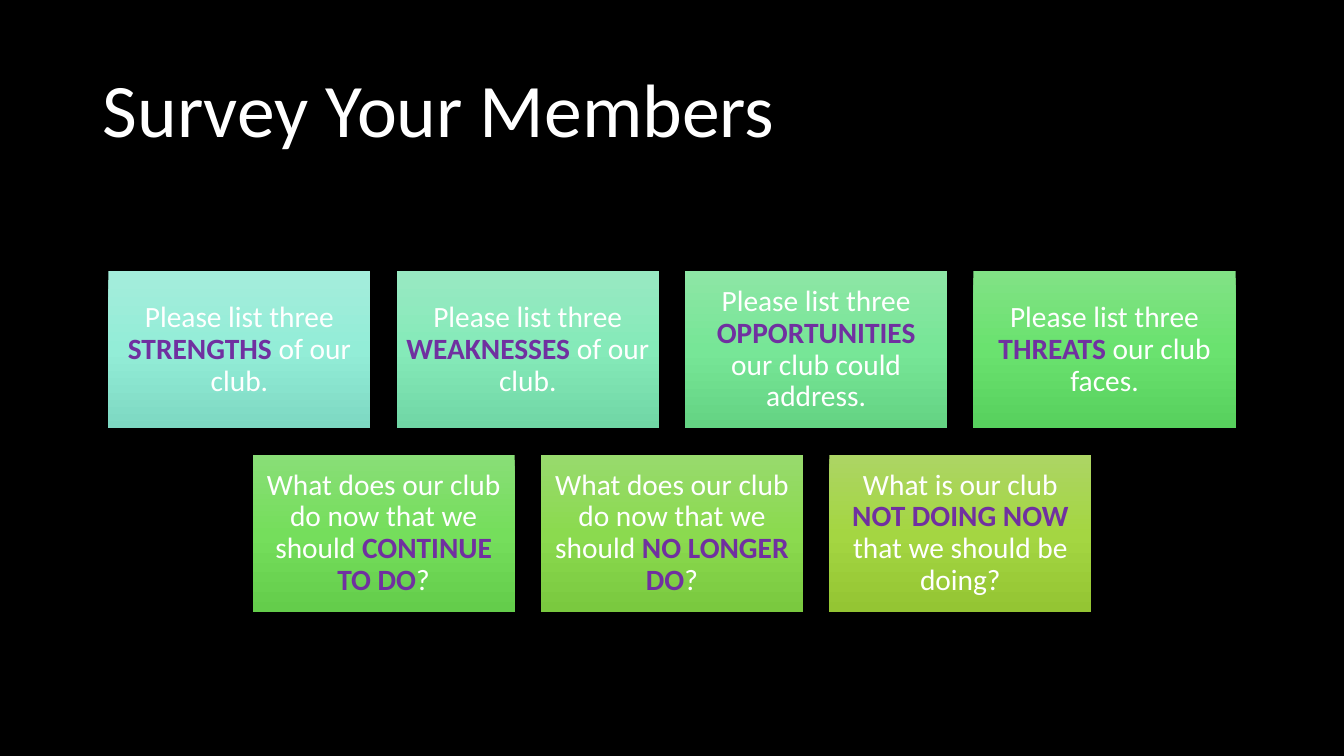
from copy import deepcopy

from pptx import Presentation
from pptx.dml.color import RGBColor
from pptx.enum.shapes import MSO_SHAPE
from pptx.enum.text import MSO_ANCHOR, PP_ALIGN
from pptx.oxml.ns import qn
from pptx.util import Inches, Pt

RECTANGLE = MSO_SHAPE.RECTANGLE
MIDDLE = MSO_ANCHOR.MIDDLE
LEFT, CENTER = PP_ALIGN.LEFT, PP_ALIGN.CENTER

TITLE = "Survey Your Members"
# Each card: text before, emphasis, text after, gradient from top to bottom
CARD_ROWS = [
    [
        ("Please list three ", "STRENGTHS", " of our club.", ("A4EDDB", "93EDD7", "7DD8C2")),
        ("Please list three ", "WEAKNESSES", " of our club.", ("98E9C2", "85EAB9", "70D6A5")),
        ("Please list three ", "OPPORTUNITIES", " our club could address.",
         ("8DE6A5", "77E697", "64D383")),
        ("Please list three ", "THREATS", " our club faces.", ("81E285", "6AE26F", "57D05D")),
    ],
    [
        ("What does our club do now that we should ", "CONTINUE TO DO", "?",
         ("89DE77", "75DE5C", "64CD4B")),
        ("What does our club do now that we should ", "NO LONGER DO", "?",
         ("98DA6D", "8BDA4F", "7AC93F")),
        ("What is our club ", "NOT DOING NOW", " that we should be doing?",
         ("ACD564", "A4D642", "94C533")),
    ],
]
COLORS = {"background": "000000", "text": "FFFFFF", "emphasis": "7030A0"}
FONT = "Calibri"

SLIDE_WIDTH, SLIDE_HEIGHT = 13.33, 7.5
CARD_WIDTH, CARD_HEIGHT = 2.6, 1.56
GAP = CARD_WIDTH / 10
CARDS_TOP = 2.69
CARD_INSET = 0.09


def write_paragraph(frame, spans, size, align):
    """Fill the frame's first paragraph with (text, is_emphasis) spans."""
    frame.word_wrap = True
    frame.vertical_anchor = MIDDLE
    para = frame.paragraphs[0]
    para.alignment = align
    para.line_spacing = 0.9
    for text, is_emphasis in spans:
        span = para.add_run()
        span.text = text
        span.font.name = FONT
        span.font.size = Pt(size)
        span.font.bold = is_emphasis
        color = COLORS["emphasis" if is_emphasis else "text"]
        span.font.color.rgb = RGBColor.from_string(color)


def fill_gradient(shape, colors):
    """Shade the shape downwards through evenly spaced colors."""
    shape.fill.gradient()
    shape.fill.gradient_angle = 270
    stop_list = next(shape._element.spPr.iter(qn("a:gsLst")))
    while len(stop_list) < len(colors):
        stop_list.append(deepcopy(stop_list[0]))
    for index, (stop, color) in enumerate(zip(shape.fill.gradient_stops, colors)):
        stop.position = index / (len(colors) - 1)
        stop.color.rgb = RGBColor.from_string(color)


def add_card(page, left, top, before, emphasis, after, gradient):
    card = page.shapes.add_shape(
        RECTANGLE, Inches(left), Inches(top), Inches(CARD_WIDTH), Inches(CARD_HEIGHT))
    card.shadow.inherit = False
    card.line.fill.background()
    fill_gradient(card, gradient)
    frame = card.text_frame
    frame.margin_left = frame.margin_right = Inches(CARD_INSET)
    frame.margin_top = frame.margin_bottom = Inches(CARD_INSET)
    write_paragraph(frame, [(before, False), (emphasis, True), (after, False)], 21, CENTER)


def main():
    deck = Presentation()
    deck.slide_width, deck.slide_height = Inches(SLIDE_WIDTH), Inches(SLIDE_HEIGHT)
    page = deck.slides.add_slide(deck.slide_layouts[6])
    page.background.fill.solid()
    page.background.fill.fore_color.rgb = RGBColor.from_string(COLORS["background"])

    title = page.shapes.add_textbox(Inches(0.92), Inches(0.4), Inches(11.5), Inches(1.45))
    write_paragraph(title.text_frame, [(TITLE, False)], 54, LEFT)

    for row, cards in enumerate(CARD_ROWS):
        row_width = len(cards) * (CARD_WIDTH + GAP) - GAP
        row_left = (SLIDE_WIDTH - row_width) / 2
        top = CARDS_TOP + row * (CARD_HEIGHT + GAP)
        for column, card in enumerate(cards):
            add_card(page, row_left + column * (CARD_WIDTH + GAP), top, *card)

    deck.save("out.pptx")


if __name__ == "__main__":
    main()
